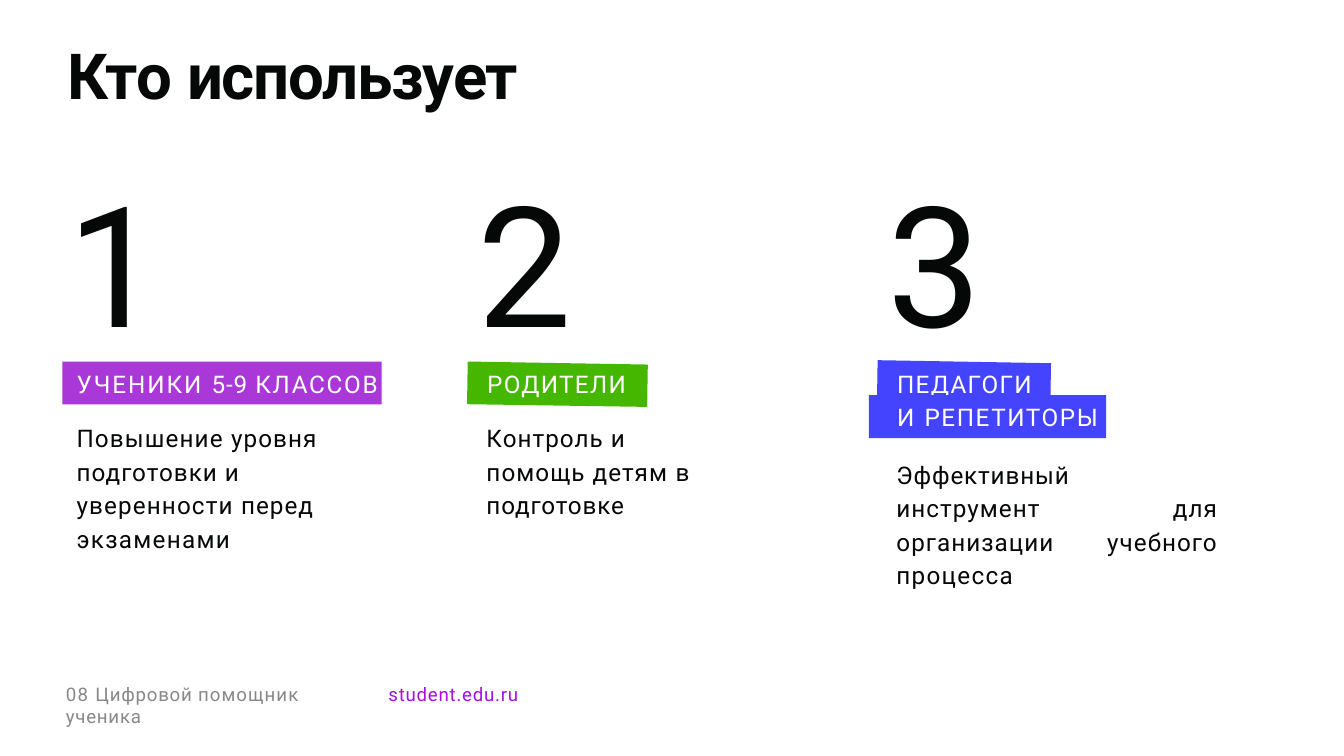
from pptx import Presentation, util as u
from pptx.dml.color import RGBColor
from pptx.enum import shapes, text

WIDTH, HEIGHT = u.Inches(20), u.Inches(11.25)
CELL = WIDTH / 80  # the slide is a grid of 80 columns by 45 rows
FONT = "Roboto"
INK, WHITE, GREY = "060808", "FFFFFF", "888888"
PURPLE, GREEN, BLUE, LINK = "AA38D8", "45B700", "4444FF", "A610E3"
BODY_TOP, LABEL_TOP, FOOTER_TOP = 24.92, 21.52, 40.6


def grid(*cells):
    return [u.Emu(round(cell * CELL)) for cell in cells]


def column(number):
    """Left edge of one of the three audience columns, in cells."""
    return 4 + 24.4 * (number - 1)


def paint(target, colour):
    target.fill.solid()
    target.fill.fore_color.rgb = RGBColor.from_string(colour)
    target.line.fill.background()
    target.shadow.inherit = False


def set_frame(frame, top=0.01):
    settings = {
        "margin_left": 0, "margin_right": 0, "margin_bottom": 0,
        "margin_top": u.Inches(top), "word_wrap": True,
        "vertical_anchor": text.MSO_ANCHOR.TOP,
        "auto_size": text.MSO_AUTO_SIZE.SHAPE_TO_FIT_TEXT,
    }
    for name, value in settings.items():
        setattr(frame, name, value)


def write(paragraph, words, size, colour=INK, bold=False, indent=0.01, before=1,
          spacing=None, align=text.PP_ALIGN.LEFT):
    """Fill a paragraph from (wording, letter spacing in points) pairs."""
    layout = {"alignment": align, "space_before": u.Pt(before), "line_spacing": spacing}
    for name, value in layout.items():
        setattr(paragraph, name, value)
    paragraph._p.get_or_add_pPr().set("marL", str(u.Inches(indent)))
    for wording, tracking in words:
        run = paragraph.add_run()
        run.text = wording
        for name, value in {"name": FONT, "size": u.Pt(size), "bold": bold}.items():
            setattr(run.font, name, value)
        run.font.color.rgb = RGBColor.from_string(colour)
        run.font._element.set("spc", str(round(tracking * 100)))


def add_text(slide, place, words, size, **style):
    frame = slide.shapes.add_textbox(*grid(*place)).text_frame
    set_frame(frame)
    write(frame.paragraphs[0], words, size, **style)


def add_label(slide, place, colour, words, **style):
    label = slide.shapes.add_shape(shapes.MSO_SHAPE.RECTANGLE, *grid(*place))
    paint(label, colour)
    set_frame(label.text_frame, top=0.11)
    write(label.text_frame.paragraphs[0], words, 26, colour=WHITE, **style)


def add_tilted_strip(slide, left, top, width, colour):
    corners = [(left + 0.04, top), (left + width, top + 0.18),
               (left + width - 0.04, top + 2.7), (left, top + 2.54)]
    start, *others = [grid(*corner) for corner in corners]
    builder = slide.shapes.build_freeform(*start)
    builder.add_line_segments(others, close=True)
    paint(builder.convert_to_shape(), colour)


def add_numbered_label(slide, number, tracking, audience):
    """Large number with the audience's name below it in one text box."""
    frame = slide.shapes.add_textbox(*grid(column(number), 6.28, 10, 17.52)).text_frame
    set_frame(frame, top=0.81)
    write(frame.paragraphs[0], [(str(number), tracking)], 180, before=58.5)
    write(frame.add_paragraph(), [(audience, 1.4)], 26, colour=WHITE,
          indent=0.15, before=8.3)


def add_benefit(slide, number, size, words, top=BODY_TOP, **style):
    add_text(slide, (column(number) + 0.52, top, *size), words, 26, spacing=1.15, **style)


def add_pupils(slide):
    add_text(slide, (column(1), 9.48, 4.96, 12.12), [("1", -12.3)], 180)
    add_label(slide, (column(1) - 0.28, LABEL_TOP, 19, 2.56), PURPLE,
              [("УЧЕНИКИ ", 2.1), ("5-", 0.9), ("9 ", 1.1), ("КЛАССОВ", 1.8)],
              indent=0.21, before=8.2)
    add_benefit(slide, 1, (19.08, 6.08),
                [("Повышение ", 1.2), ("уровня подготовки и ", 1.1),
                 ("уверенности ", 1.2), ("перед ", 1.1), ("экзаменами", 1.4)])


def add_parents(slide):
    add_tilted_strip(slide, column(2) - 0.6, LABEL_TOP, 10.76, GREEN)
    add_numbered_label(slide, 2, 5.3, "РОДИТЕЛИ")
    add_benefit(slide, 2, (14.12, 4.08),
                [("Контроль и помощь детям ", 1.1), ("в подготовке", 0.9)])


def add_teachers(slide):
    add_tilted_strip(slide, column(3) - 0.6, LABEL_TOP - 0.08, 10.36, BLUE)
    add_numbered_label(slide, 3, 6.3, "ПЕДАГОГИ")
    add_label(slide, (column(3) - 1.08, LABEL_TOP + 2, 14.12, 2.56), BLUE,
              [("И ", 2.2), ("РЕПЕТИТОРЫ", 1.7)], indent=0.42, before=8.1)
    add_benefit(slide, 3, (19.2, 6.08),
                [("Эффективный ", 0.9), ("инструмент для организации учебного ", 1.1),
                 ("процесса", 1.4)],
                top=BODY_TOP + 2.16, align=text.PP_ALIGN.JUSTIFY)


def add_footer(slide):
    add_text(slide, (3.88, FOOTER_TOP, 18.48, 1.44),
             [("08 ", 1.4), ("Цифровой ", 0.8), ("помощник ", 1.1), ("ученика", 0.8)],
             20, colour=GREY, before=0.6)
    add_text(slide, (22.92, FOOTER_TOP, 8.2, 1.44), [("student.edu.ru", 0.8)],
             20, colour=LINK, indent=0.05, before=0.6)


def main():
    deck = Presentation()
    deck.slide_width, deck.slide_height = WIDTH, HEIGHT
    slide = deck.slides.add_slide(deck.slide_layouts[6])
    add_text(slide, (column(1), 2.12, 29.24, 4.64),
             [("Кто ", -1), ("использует", -1.4)], 68, bold=True)
    add_pupils(slide)
    add_parents(slide)
    add_teachers(slide)
    add_footer(slide)
    deck.save("out.pptx")


if __name__ == "__main__":
    main()
